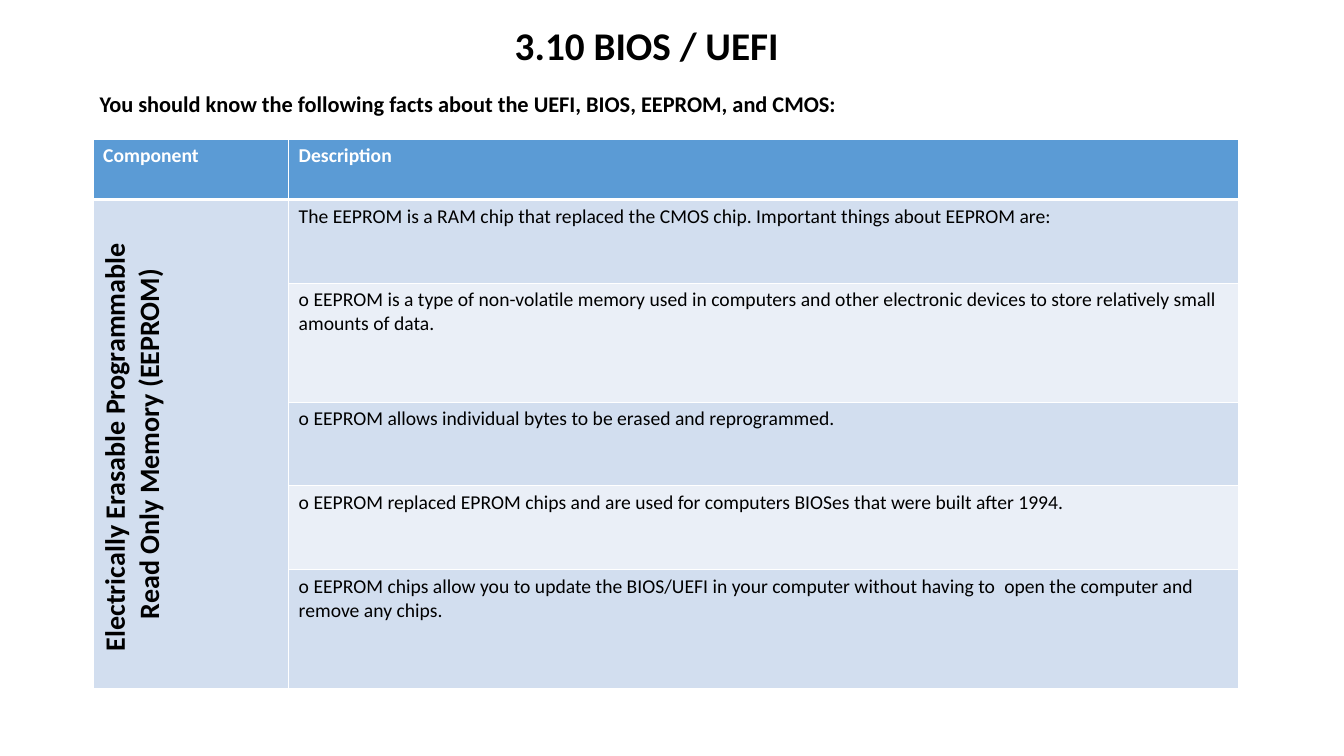
import dataclasses

import pptx
import pptx.dml.color
import pptx.enum.text
import pptx.oxml
import pptx.oxml.ns
import pptx.util

Pt = pptx.util.Pt
Align = pptx.enum.text.PP_ALIGN
Anchor = pptx.enum.text.MSO_ANCHOR


@dataclasses.dataclass(frozen=True)
class Theme:
    font: str = "Calibri"
    ink: str = "000000"
    white: str = "FFFFFF"
    header: str = "5B9BD5"
    bands: tuple = ("D2DEEF", "EAEFF7")
    title_size: int = 28
    intro_size: int = 16
    component_size: int = 20
    body_size: int = 14
    rule: int = 1
    header_rule: int = 3


THEME = Theme()
COLUMN_WIDTHS = (139.7, 678.2)
ROW_HEIGHTS = (43.2, 59.8, 85, 59.8, 59.8, 85)
HEADINGS = ("Component", "Description")
COMPONENT = "Electrically Erasable Programmable \nRead Only Memory (EEPROM)"
FACTS = (
    "The EEPROM is a RAM chip that replaced the CMOS chip. Important things about EEPROM are:",
    "o EEPROM is a type of non-volatile memory used in computers and other electronic devices "
    "to store relatively small amounts of data.",
    "o EEPROM allows individual bytes to be erased and reprogrammed.",
    "o EEPROM replaced EPROM chips and are used for computers BIOSes that were built after 1994.",
    "o EEPROM chips allow you to update the BIOS/UEFI in your computer without having to "
    "\topen the computer and remove any chips.",
)


def write(frame, text, size=THEME.body_size, color=THEME.ink, bold=False, align=Align.LEFT):
    """Fill a text frame, one paragraph per line of text."""
    for index, line in enumerate(text.split("\n")):
        paragraph = frame.add_paragraph() if index else frame.paragraphs[0]
        paragraph.alignment = align
        run = paragraph.add_run()
        run.text = line
        run.font.name = THEME.font
        run.font.size = Pt(size)
        run.font.bold = bold
        run.font.color.rgb = pptx.dml.color.RGBColor.from_string(color)


def style_cell(cell, fill, top, bottom):
    """Give a cell its white borders and its fill."""
    properties = cell._tc.get_or_add_tcPr()
    widths = {"L": THEME.rule, "R": THEME.rule, "T": top, "B": bottom}
    for side, width in widths.items():
        properties.append(pptx.oxml.parse_xml(
            f'<a:ln{side} {pptx.oxml.ns.nsdecls("a")} w="{Pt(width)}"><a:solidFill>'
            f'<a:srgbClr val="{THEME.white}"/></a:solidFill></a:ln{side}>'))
    cell.fill.solid()
    cell.fill.fore_color.rgb = pptx.dml.color.RGBColor.from_string(fill)


def add_title(slide, left, top, width, height):
    title = slide.shapes.title
    title.left, title.top, title.width, title.height = map(Pt, (left, top, width, height))
    frame = title.text_frame
    frame.word_wrap = False
    frame.auto_size = pptx.enum.text.MSO_AUTO_SIZE.NONE
    frame.vertical_anchor = Anchor.TOP
    write(frame, "3.10 BIOS / UEFI", size=THEME.title_size, bold=True, align=Align.CENTER)


def add_intro(slide, left, top, width, height):
    intro = slide.shapes.add_textbox(Pt(left), Pt(top), Pt(width), Pt(height))
    intro.text_frame.word_wrap = True
    write(intro.text_frame,
          "You should know the following facts about the UEFI, BIOS, EEPROM, and CMOS:",
          size=THEME.intro_size, bold=True)


def add_fact_table(slide, left, top):
    table = slide.shapes.add_table(
        len(ROW_HEIGHTS), len(COLUMN_WIDTHS), Pt(left), Pt(top),
        Pt(sum(COLUMN_WIDTHS)), Pt(sum(ROW_HEIGHTS))).table
    for column, width in zip(table.columns, COLUMN_WIDTHS):
        column.width = Pt(width)
    for row, height in zip(table.rows, ROW_HEIGHTS):
        row.height = Pt(height)

    # Header row
    for column, heading in enumerate(HEADINGS):
        cell = table.cell(0, column)
        style_cell(cell, THEME.header, THEME.rule, THEME.header_rule)
        write(cell.text_frame, heading, color=THEME.white, bold=True)

    # Banded facts
    for row, fact in enumerate(FACTS, start=1):
        top_rule = THEME.header_rule if row == 1 else THEME.rule
        fills = (THEME.bands[0], THEME.bands[(row - 1) % 2])
        for column, fill in enumerate(fills):
            style_cell(table.cell(row, column), fill, top_rule, THEME.rule)
        write(table.cell(row, 1).text_frame, fact)

    # Component name, reading upwards beside all the facts
    component = table.cell(1, 0)
    component.merge(table.cell(len(FACTS), 0))
    component.vertical_anchor = Anchor.MIDDLE
    component._tc.get_or_add_tcPr().set("vert", "vert270")
    write(component.text_frame, COMPONENT, size=THEME.component_size, bold=True,
          align=Align.CENTER)


def main():
    deck = pptx.Presentation()
    deck.slide_width, deck.slide_height = Pt(960), Pt(540)
    slide = deck.slides.add_slide(deck.slide_layouts[5])
    add_title(slide, 359.3, 11.5, 205.2, 41)
    add_intro(slide, 64, 61.2, 896, 28.8)
    add_fact_table(slide, 66.5, 99.3)
    deck.save("out.pptx")


if __name__ == "__main__":
    main()
